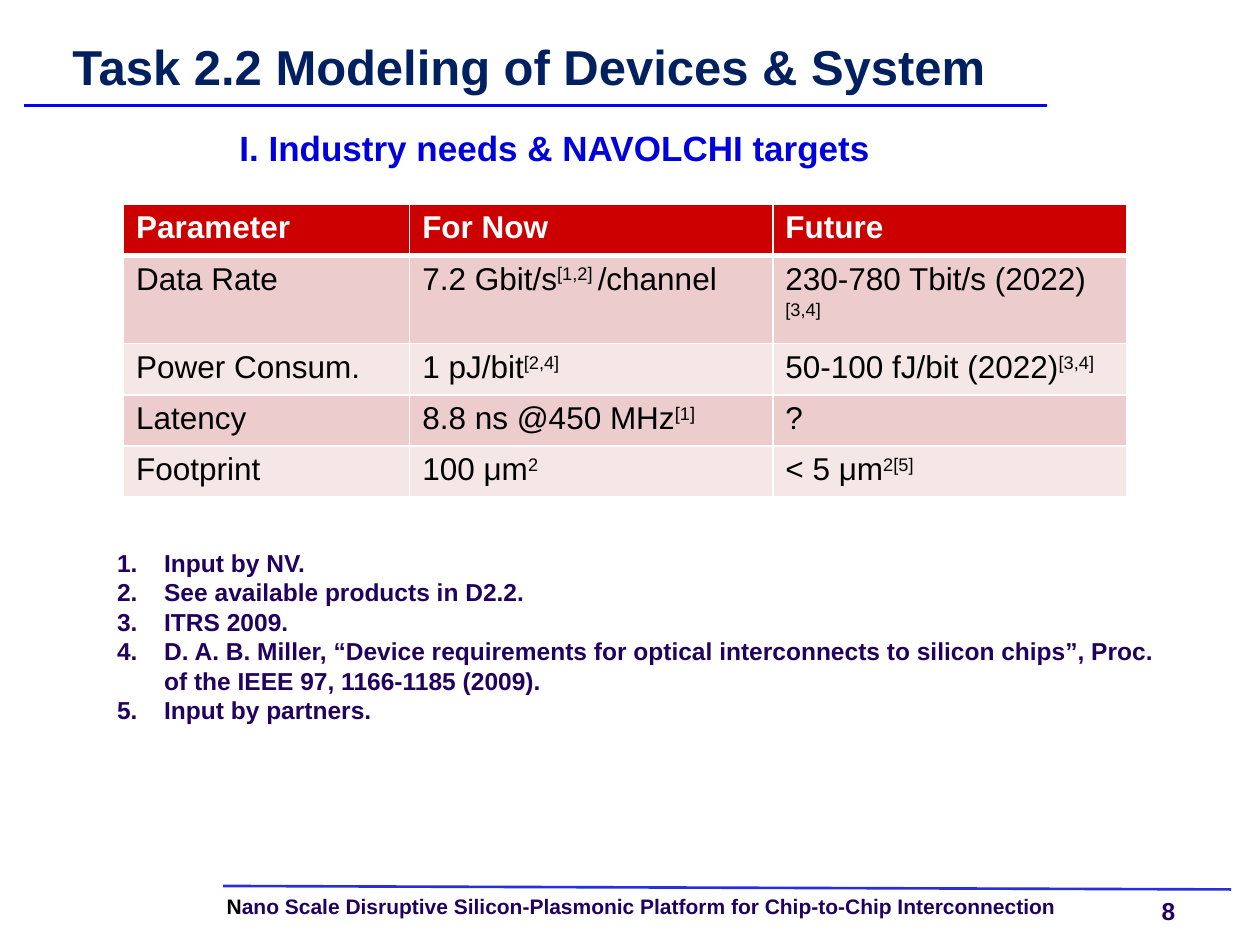
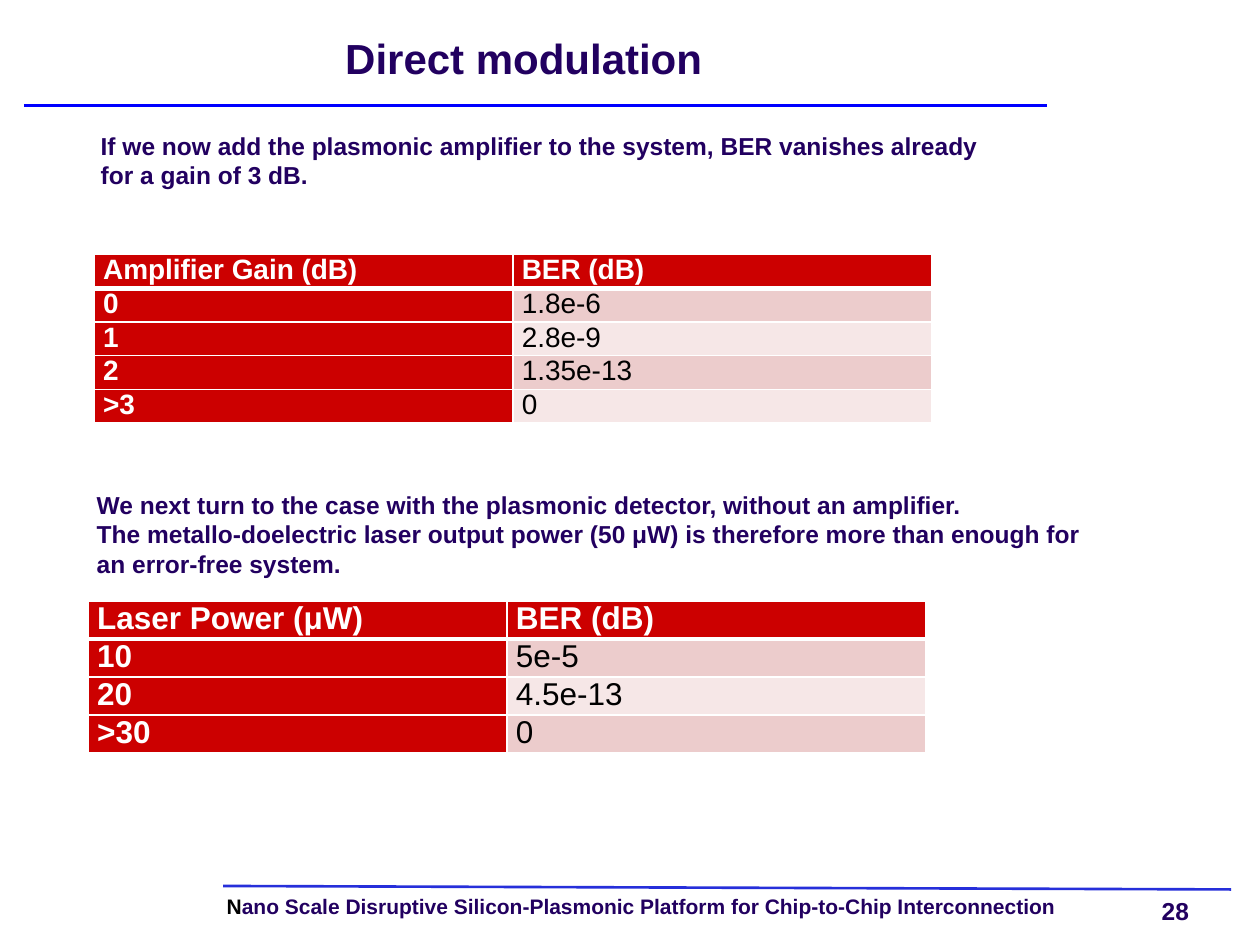
"""Build two project slides on device and system modelling with three data tables."""
from lxml import etree
from pptx import Presentation
from pptx.dml.color import RGBColor
from pptx.enum.shapes import MSO_CONNECTOR
from pptx.enum.text import MSO_ANCHOR, PP_ALIGN
from pptx.oxml import parse_xml
from pptx.oxml.ns import nsdecls, qn
from pptx.util import Cm, Pt

STRAIGHT = MSO_CONNECTOR.STRAIGHT
MIDDLE = MSO_ANCHOR.MIDDLE
CENTER, JUSTIFY, LEFT = PP_ALIGN.CENTER, PP_ALIGN.JUSTIFY, PP_ALIGN.LEFT

FONT = "Arial"
BLACK = RGBColor(0x00, 0x00, 0x00)
WHITE = RGBColor(0xFF, 0xFF, 0xFF)
PURPLE = RGBColor(0x22, 0x00, 0x60)
NAVY = RGBColor(0x00, 0x20, 0x60)
BLUE = RGBColor(0x00, 0x00, 0xDD)
TITLE_RULE = RGBColor(0x00, 0x00, 0xFF)
FOOTER_RULE = RGBColor(0x26, 0x2F, 0xDA)
RED = RGBColor(0xCC, 0x00, 0x00)
PINK = RGBColor(0xEC, 0xCC, 0xCC)
PALE_PINK = RGBColor(0xF6, 0xE7, 0xE7)


def add_text(page, place, text, size, color=PURPLE, padded=True, wrap=True):
    box = page.shapes.add_textbox(*map(Cm, place))
    frame = box.text_frame
    frame.word_wrap = wrap
    if not padded:
        frame.margin_left = frame.margin_right = 0
        frame.margin_top = frame.margin_bottom = 0
    frame.text = text
    for paragraph in frame.paragraphs:
        for span in paragraph.runs:
            span.font.name = FONT
            span.font.size = Pt(size)
            span.font.bold = True
            span.font.color.rgb = color
    return frame


def add_grid(page, left, top, widths, heights, rows, size, compact=False):
    """Fill a table; text between carets is set as superscript."""
    frame = page.shapes.add_table(len(rows), len(widths), Cm(left), Cm(top),
                                  Cm(sum(widths)), Cm(sum(heights)))
    grid = frame.table
    grid.first_col = compact
    for column, width in zip(grid.columns, widths):
        column.width = Cm(width)
    for i, (row, height) in enumerate(zip(rows, heights)):
        grid.rows[i].height = Cm(height)
        for j, text in enumerate(row):
            cell = grid.cell(i, j)
            heading = i == 0 or (compact and j == 0)
            if compact:
                cell.margin_left = cell.margin_right = Cm(0.18)
                cell.margin_top = cell.margin_bottom = 0
            properties = cell._tc.get_or_add_tcPr()
            for side in "LRTB":
                thick = (i, side) in ((0, "B"), (1, "T"))
                properties.append(parse_xml(
                    f'<a:ln{side} {nsdecls("a")} w="{Pt(3 if thick else 1)}"><a:solidFill>'
                    f'<a:srgbClr val="{WHITE}"/></a:solidFill></a:ln{side}>'))
            cell.fill.solid()
            cell.fill.fore_color.rgb = RED if heading else PINK if i % 2 else PALE_PINK
            paragraph = cell.text_frame.paragraphs[0]
            paragraph.alignment = JUSTIFY if compact else LEFT
            for k, part in enumerate(text.split("^")):
                if not part:
                    continue
                span = paragraph.add_run()
                span.text = part
                span.font.name = FONT
                span.font.size = Pt(size)
                span.font.bold = heading
                span.font.color.rgb = WHITE if heading else BLACK
                if k % 2:
                    span.font._element.set("baseline", "30000")


deck = Presentation()
deck.slide_width, deck.slide_height = Cm(25.4), Cm(19.05)

pages = []
for number in (8, 28):
    page = deck.slides.add_slide(deck.slide_layouts[6])
    pages.append(page)
    footer = add_text(page, (4.57, 18.06, 18.14, 0.46), "N", 12, BLACK, padded=False)
    footer_line = footer.paragraphs[0]
    footer_line.line_spacing = 0.9
    span = footer_line.add_run()
    span.text = "ano Scale Disruptive Silicon-Plasmonic Platform for Chip-to-Chip Interconnection"
    span.font.name = FONT
    span.font.size = Pt(12)
    span.font.bold = True
    span.font.color.rgb = PURPLE
    add_text(page, (23.42, 18.06, 0.61, 0.58), str(number), 14, padded=False, wrap=False)
    for ends, color in (((4.5, 17.86, 24.82, 17.93), FOOTER_RULE),
                        ((0.48, 2.13, 21.11, 2.13), TITLE_RULE)):
        rule = page.shapes.add_connector(STRAIGHT, *map(Cm, ends))
        rule.line.color.rgb = color
        rule.line.width = Pt(1.5)
        etree.SubElement(rule._element.spPr, qn("a:effectLst"))

targets, modulation = pages

title = add_text(targets, (0.36, 0.51, 20.6, 1.7),
                 "Task 2.2 Modeling of Devices & System", 28, NAVY, padded=False)
title.vertical_anchor = MIDDLE
title.paragraphs[0].alignment = CENTER
title.paragraphs[0].line_spacing = Pt(32)

add_grid(targets, 2.49, 4.11, (5.77, 7.32, 7.14), (1.04, 1.77, 1.03, 1.03, 1.03), (
    ("Parameter", "For Now", "Future"),
    ("Data Rate", "7.2 Gbit/s^[1,2] ^/channel", "230-780 Tbit/s (2022)^[3,4]^"),
    ("Power Consum.", "1 pJ/bit^[2,4]^", "50-100 fJ/bit (2022)^[3,4]^"),
    ("Latency", "8.8 ns @450 MHz^[1]^", "?"),
    ("Footprint", "100 μm^2^", "< 5 μm^2[5]^"),
), 18)

references = add_text(targets, (2.11, 10.92, 21.62, 3.81), "\n".join((
    "Input by NV.",
    "See available products in D2.2.",
    "ITRS 2009.",
    "D. A. B. Miller, “Device requirements for optical interconnects to silicon chips”, "
    "Proc. of the IEEE 97, 1166-1185 (2009).",
    "Input by partners.",
)), 14)
for paragraph in references.paragraphs:
    properties = paragraph._p.get_or_add_pPr()
    properties.set("marL", str(Cm(0.95)))
    properties.set("indent", str(-Cm(0.95)))
    etree.SubElement(properties, qn("a:buFont"), typeface="+mj-lt")
    etree.SubElement(properties, qn("a:buAutoNum"), type="arabicPeriod")

subtitle = add_text(targets, (2.69, 2.13, 16.99, 1.27),
                    "I. Industry needs & NAVOLCHI targets", 20, BLUE, padded=False)
subtitle.paragraphs[0].alignment = CENTER
subtitle.paragraphs[0].line_spacing = 1.5

add_text(modulation, (1.78, 2.51, 18.75, 1.45),
         "If we now add the plasmonic amplifier to the system, BER vanishes already "
         "for a gain of 3 dB.", 14)
add_text(modulation, (6.71, 0.53, 7.77, 1.27), "Direct modulation", 24, wrap=False)
add_text(modulation, (1.7, 9.75, 20.4, 2.64),
         "We next turn to the case with the plasmonic detector, without an amplifier.\n"
         "The metallo-doelectric laser output power (50 μW) is therefore more than enough "
         "for an error-free system.", 14)

add_grid(modulation, 1.9, 5.13, [8.44] * 2, [0.68] * 5, (
    ("Amplifier Gain (dB)", "BER (dB)"),
    ("0", "1.8e-6"),
    ("1", "2.8e-9"),
    ("2", "1.35e-13"),
    (">3", "0"),
), 16, compact=True)
add_grid(modulation, 1.78, 12.12, [8.44] * 2, [0.76] * 4, (
    ("Laser Power (μW)", "BER (dB)"),
    ("10", "5e-5"),
    ("20", "4.5e-13"),
    (">30", "0"),
), 18, compact=True)

deck.save("out.pptx")
